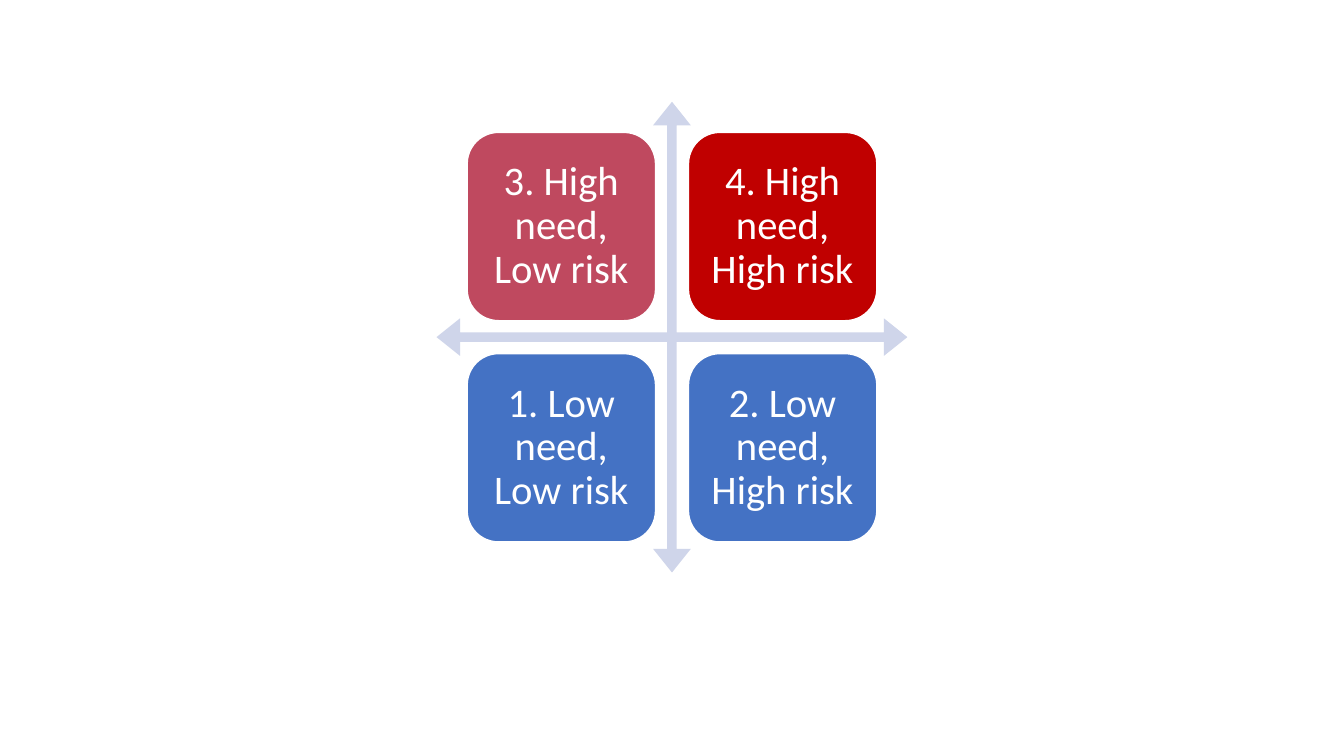
from dataclasses import dataclass

from pptx import Presentation
from pptx.dml.color import RGBColor
from pptx.enum.shapes import MSO_SHAPE
from pptx.enum.text import MSO_ANCHOR, PP_ALIGN
from pptx.util import Inches, Pt

QUAD_ARROW = MSO_SHAPE.QUAD_ARROW
ROUNDED = MSO_SHAPE.ROUNDED_RECTANGLE
MIDDLE = MSO_ANCHOR.MIDDLE
CENTER = PP_ALIGN.CENTER


@dataclass(frozen=True)
class Theme:
    font: str = "Calibri"
    size: int = 29
    white: str = "FFFFFF"
    arrow: str = "CFD5EA"
    blue: str = "4472C4"
    rose: str = "BF495F"
    red: str = "C00000"


THEME = Theme()

QUADRANTS = [
    [("3. High need, Low risk", THEME.rose), ("4. High need, High risk", THEME.red)],
    [("1. Low need, Low risk", THEME.blue), ("2. Low need, High risk", THEME.blue)],
]


def add_filled(slide, kind, left, top, side, color):
    sp = slide.shapes.add_shape(
        kind, Inches(left), Inches(top), Inches(side), Inches(side)
    )
    sp.shadow.inherit = False
    sp.fill.solid()
    sp.fill.fore_color.rgb = RGBColor.from_string(color)
    return sp


def add_axes(slide, left, top, side):
    sp = add_filled(slide, QUAD_ARROW, left, top, side, THEME.arrow)
    sp.line.fill.background()
    for i, value in enumerate((0.02, 0.04, 0.05)):
        sp.adjustments[i] = value


def add_quadrant(slide, left, top, side, text, color):
    sp = add_filled(slide, ROUNDED, left, top, side, color)
    sp.line.color.rgb = RGBColor.from_string(THEME.white)
    sp.line.width = Pt(1)
    tf = sp.text_frame
    tf.word_wrap = True
    tf.vertical_anchor = MIDDLE
    tf.margin_left = tf.margin_right = Inches(0.12)
    tf.margin_top = tf.margin_bottom = Inches(0.12)
    tf.text = text
    p = tf.paragraphs[0]
    p.alignment = CENTER
    p.line_spacing = 0.9
    font = p.runs[0].font
    font.name = THEME.font
    font.size = Pt(THEME.size)
    font.color.rgb = RGBColor.from_string(THEME.white)


def add_matrix(slide, left, top, side):
    add_axes(slide, left, top, side)
    tile, margin, pitch = 0.4 * side, 0.065 * side, 0.47 * side
    for row, quadrants in enumerate(QUADRANTS):
        for col, (text, color) in enumerate(quadrants):
            x = left + margin + col * pitch
            y = top + margin + row * pitch
            add_quadrant(slide, x, y, tile, text, color)


def main():
    prs = Presentation()
    prs.slide_width = Inches(13.33)
    prs.slide_height = Inches(7.5)
    slide = prs.slides.add_slide(prs.slide_layouts[6])
    add_matrix(slide, 4.33, 1.01, 4.67)
    prs.save("out.pptx")


if __name__ == "__main__":
    main()
